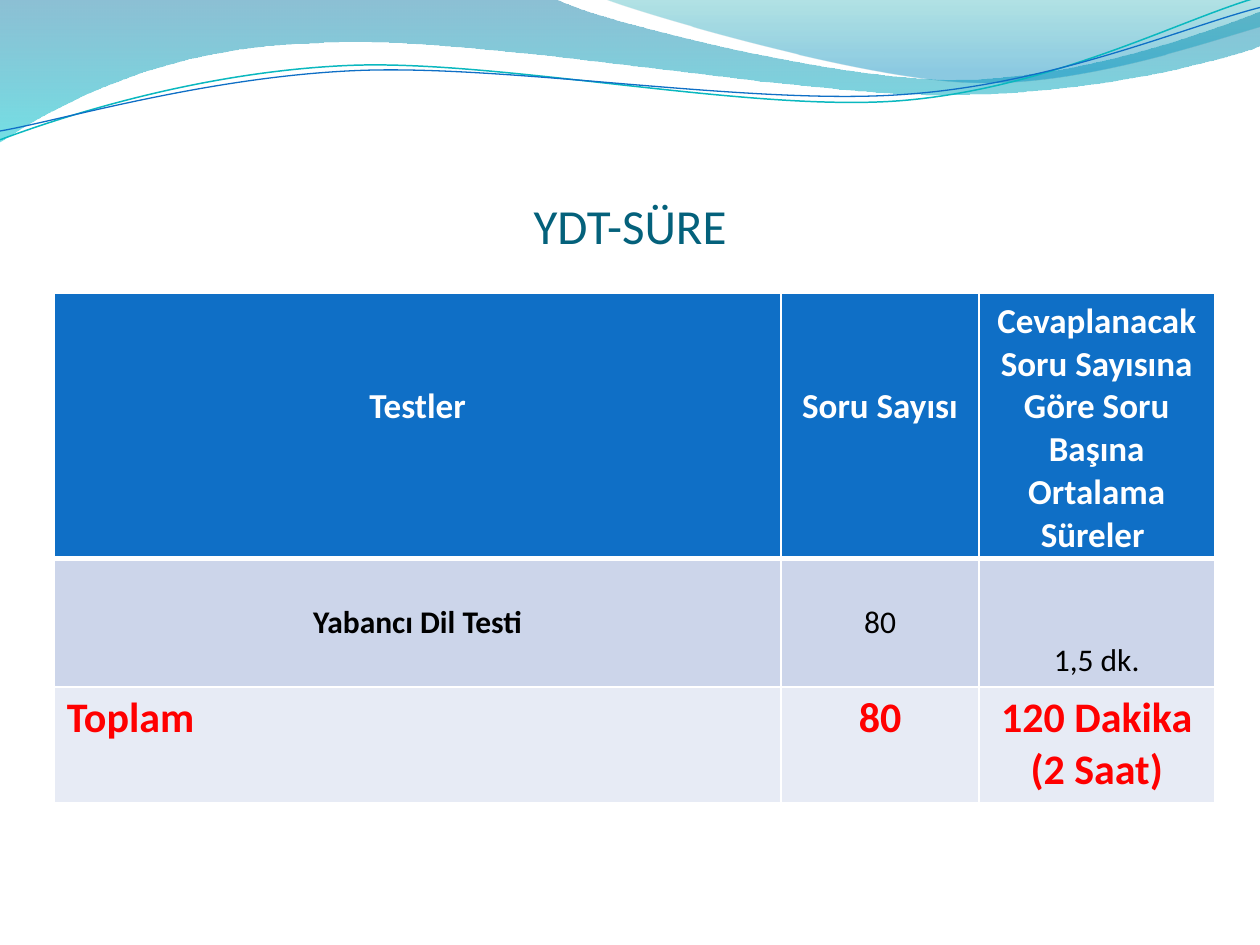
"""Build the YDT-SÜRE slide: waves across the top, a title and a table of test times."""
import math

import pptx
import pptx.dml.color
import pptx.enum.text
import pptx.oxml
import pptx.oxml.ns
import pptx.util

WIDTH, HEIGHT = 10, 7.5
FONT = "Calibri"
TITLE = "YDT-SÜRE"
WHITE = "FFFFFF"
UNITS_PER_INCH = 1000

# Each wave is a start point, then lines (one point) and curves (three points).
WAVES = [
    {"start": (0, 0),
     "segments": [[(4.4, -0.01)],
                  [(4.76, 0.17), (6.64, 0.63), (7.58, 0.63)],
                  [(8.53, 0.63), (9.58, 0.26), (10, 0.09)],
                  [(10.01, 0.36)],
                  [(9.83, 0.44), (8.7, 0.76), (7.46, 0.75)],
                  [(6.22, 0.75), (3.82, 0.28), (2.57, 0.34)],
                  [(1.29, 0.36), (0.46, 0.83), (-0.01, 1.13)]],
     "gradient": [(0, "0074A1", 45), (1, "00C6CF", 55)]},
    {"start": (4.79, -0.01),
     "segments": [[(5.09, 0.11), (6.82, 0.62), (7.69, 0.65)],
                  [(8.56, 0.69), (9.61, 0.32), (10, 0.21)],
                  [(10, 0)]],
     "gradient": [(0, "00A1A9", 30), (0.8, "008BBF", 45)]},
    {"start": (0, 1.11),
     "segments": [[(0.48, 0.93), (1.58, 0.57), (2.77, 0.52)],
                  [(3.95, 0.47), (5.93, 0.89), (7.13, 0.8)],
                  [(8.33, 0.71), (9.38, 0.15), (9.98, -0.02)]],
     "line": ("0AB8BF", 0.85), "tilt": -2.7, "centre": (4.99, 0.58)},
    {"start": (0, 1.04),
     "segments": [[(0.47, 0.96), (1.64, 0.61), (2.83, 0.56)],
                  [(4.03, 0.51), (5.97, 0.84), (7.17, 0.75)],
                  [(8.36, 0.67), (9.41, 0.21), (10, 0.06)]],
     "line": ("0F6FC6", 0.75), "tilt": -2.7, "centre": (5, 0.59)},
]

COLUMN_WIDTHS = [5.77, 1.57, 1.87]
TABLE_HEIGHT = 4.05
# Each cell is its text, the lines it sits below the top, bold, centred.
ROWS = [
    {"height": 1.65, "fill": "0F6FC6", "size": 20, "color": WHITE, "top": 1, "bottom": 3,
     "cells": [("Testler", 2, True, True),
               ("Soru Sayısı", 2, True, True),
               ("Cevaplanacak Soru Sayısına Göre Soru Başına Ortalama Süreler ", 0, True, True)]},
    {"height": 1.02, "fill": "CCD5EA", "size": 18, "color": "000000", "top": 3, "bottom": 1,
     "cells": [("Yabancı Dil Testi", 1, True, True),
               ("80", 1, False, True),
               ("1,5 dk.", 2, False, True)]},
    {"height": 0.92, "fill": "E7EBF5", "size": 24, "color": "FF0000", "top": 1, "bottom": 1,
     "cells": [("Toplam", 0, True, False),
               ("80", 0, True, True),
               ("120 Dakika (2 Saat)", 0, True, True)]},
]
LINE_SPACING = 1.22
CELL_MARGIN = 0.05


def rgb(value):
    return pptx.dml.color.RGBColor.from_string(value)


def inches(*values):
    return [pptx.util.Inches(value) for value in values]


def write(paragraph, text, size, color, bold=False, centred=True):
    paragraph.text = text
    align = pptx.enum.text.PP_ALIGN
    paragraph.alignment = align.CENTER if centred else align.LEFT
    font = paragraph.font
    font.name, font.size, font.bold = FONT, pptx.util.Pt(size), bold
    font.color.rgb = rgb(color)


def turn(point, centre, degrees):
    cos, sin = math.cos(math.radians(degrees)), math.sin(math.radians(degrees))
    dx, dy = point[0] - centre[0], point[1] - centre[1]
    return centre[0] + dx * cos - dy * sin, centre[1] + dx * sin + dy * cos


def bend(shape, segments):
    line_tos = iter(shape.element.findall(".//" + pptx.oxml.ns.qn("a:lnTo")))
    for segment in segments:
        steps = [next(line_tos) for _ in segment]
        if len(steps) == 3:
            curve = pptx.oxml.parse_xml(f'<a:cubicBezTo {pptx.oxml.ns.nsdecls("a")}/>')
            steps[0].addprevious(curve)
            for step in steps:
                curve.append(step[0])
                step.getparent().remove(step)


def add_wave(slide, wave):
    tilt, centre = wave.get("tilt", 0), wave.get("centre", (0, 0))
    points = [wave["start"], *(point for segment in wave["segments"] for point in segment)]
    first, *others = [tuple(value * UNITS_PER_INCH for value in turn(point, centre, -tilt))
                      for point in points]
    builder = slide.shapes.build_freeform(*first, scale=914400 / UNITS_PER_INCH)
    builder.add_line_segments(others, close="gradient" in wave)
    shape = builder.convert_to_shape()
    bend(shape, wave["segments"])
    shape.rotation = tilt
    shape.shadow.inherit = False
    if "line" in wave:
        color, width = wave["line"]
        shape.fill.background()
        shape.line.color.rgb = rgb(color)
        shape.line.width = pptx.util.Pt(width)
        return
    shape.line.fill.background()
    shape.fill.gradient()
    shape.fill.gradient_angle = 270
    for stop, (position, color, opacity) in zip(shape.fill.gradient_stops, wave["gradient"]):
        stop.position = position
        stop.color.rgb = rgb(color)
    tints = shape.element.spPr.findall(".//" + pptx.oxml.ns.qn("a:srgbClr"))
    for tint, (position, color, opacity) in zip(tints, wave["gradient"]):
        tint.append(pptx.oxml.parse_xml(
            f'<a:alpha {pptx.oxml.ns.nsdecls("a")} val="{opacity * 1000}"/>'))


def add_borders(cell, top, bottom):
    properties = cell._tc.get_or_add_tcPr()
    for side, width in (("L", 1), ("R", 1), ("T", top), ("B", bottom)):
        properties.append(pptx.oxml.parse_xml(
            f'<a:ln{side} {pptx.oxml.ns.nsdecls("a")} w="{pptx.util.Pt(width)}">'
            f'<a:solidFill><a:srgbClr val="{WHITE}"/></a:solidFill></a:ln{side}>'))


def add_title(slide):
    frame = slide.shapes.add_textbox(*inches(0.05 * WIDTH, 0.77, 0.9 * WIDTH, 1.25)).text_frame
    frame.word_wrap = True
    frame.vertical_anchor = pptx.enum.text.MSO_ANCHOR.BOTTOM
    frame.margin_left = frame.margin_right = frame.margin_bottom = 0
    write(frame.paragraphs[0], TITLE, 28, "04617B")


def add_times(slide):
    times = slide.shapes.add_table(len(ROWS), len(COLUMN_WIDTHS),
                                   *inches(0.43, 2.33, sum(COLUMN_WIDTHS), TABLE_HEIGHT))
    table = times.table
    for column, width in zip(table.columns, COLUMN_WIDTHS):
        column.width = pptx.util.Inches(width)
    for r, row in enumerate(ROWS):
        table.rows[r].height = pptx.util.Inches(row["height"])
        line_height = row["size"] * LINE_SPACING / 72
        for c, (text, lines_above, bold, centred) in enumerate(row["cells"]):
            cell = table.cell(r, c)
            add_borders(cell, row["top"], row["bottom"])
            cell.fill.solid()
            cell.fill.fore_color.rgb = rgb(row["fill"])
            cell.margin_top = pptx.util.Inches(CELL_MARGIN + lines_above * line_height)
            write(cell.text_frame.paragraphs[0], text, row["size"], row["color"], bold, centred)
    times.height = pptx.util.Inches(TABLE_HEIGHT)


def main():
    deck = pptx.Presentation()
    deck.slide_width, deck.slide_height = inches(WIDTH, HEIGHT)
    slide = deck.slides.add_slide(deck.slide_layouts[6])
    for wave in WAVES:
        add_wave(slide, wave)
    add_title(slide)
    add_times(slide)
    deck.save("out.pptx")


if __name__ == "__main__":
    main()
